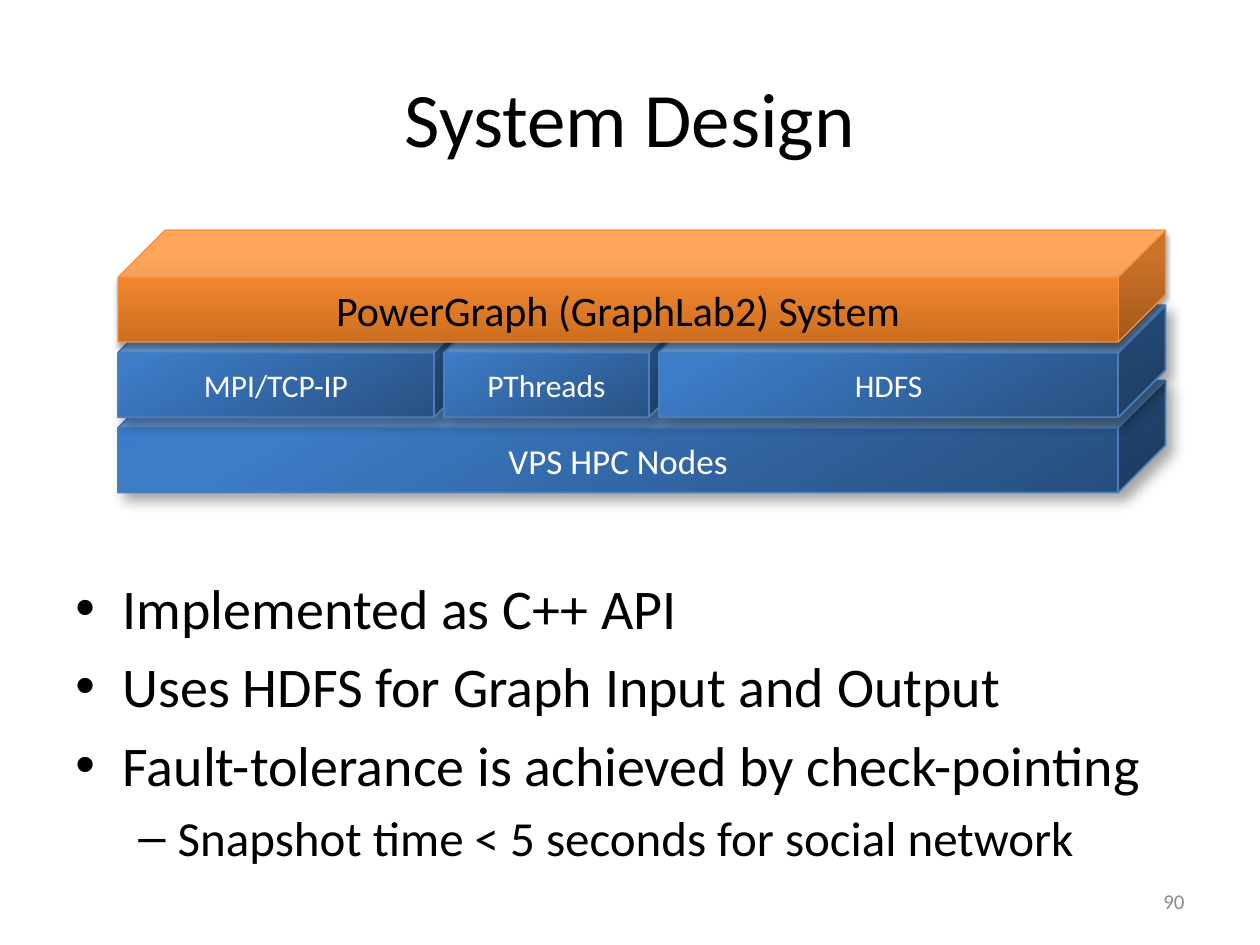
from lxml import etree
from pptx import Presentation
from pptx import util as u
from pptx.dml.color import RGBColor
from pptx.enum import shapes, text
from pptx.oxml.ns import qn

# Content
TITLE = "System Design"
PAGE = "90"
# Layers from bottom to top: style, type size, blocks as (label, front width)
LAYERS = [
    ("blue", 20, [("VPS HPC Nodes", 571.5)]),
    ("blue", 18, [("MPI/TCP-IP", 180.5), ("PThreads", 117), ("HDFS", 262.5)]),
    ("orange", 24, [("PowerGraph (GraphLab2) System", 571.5)]),
]
BULLETS = [
    (0, "Implemented as C++ API"),
    (0, "Uses HDFS for Graph Input and Output"),
    (0, "Fault-tolerance is achieved by check-pointing"),
    (1, "Snapshot time < 5 seconds for social network"),
]

THEME = {
    "font": "Calibri",
    "ink": "000000",
    "muted": "8C8C8C",
    "title": 44,
    "page": 12,
    # Per level: size, bullet, left margin, hanging indent
    "levels": [(32, "•", 27, 27), (28, "–", 58.5, 22.5)],
    # Shadow: blur, distance, angle
    "blue": {"stops": [(0, "254C7A"), (80, "3D7CC7"), (100, "3A7CCB")], "angle": 120,
             "line": "4B7EBC", "width": 1, "text": "FFFFFF", "shadow": (7, 5, 50)},
    "orange": {"stops": [(0, "CC6E20"), (80, "FF9034"), (100, "FF9136")], "angle": 90,
               "line": "F69240", "width": 0.75, "text": "000000", "shadow": (3.1, 1.8, 90)},
}
LEFT, BOTTOM_TOP, PITCH, HEIGHT, DEPTH, GAP = 67.5, 217.5, 43, 64, 27, 5.75


def add_run(p, words, size, color):
    r = p.add_run()
    r.text = words
    r.font.name, r.font.size = THEME["font"], u.Pt(size)
    r.font.color.rgb = RGBColor.from_string(color)


def add_text_box(s, box, anchor):
    tf = s.shapes.add_textbox(*map(u.Pt, box)).text_frame
    tf.word_wrap, tf.vertical_anchor = True, anchor
    return tf


def add_color(parent, color, alpha=None):
    el = etree.SubElement(parent, qn("a:srgbClr"), val=color)
    if alpha is not None:
        etree.SubElement(el, qn("a:alpha"), val=str(alpha * 1000))


def add_block(s, box, label, size, style):
    sp = s.shapes.add_shape(shapes.MSO_SHAPE.CUBE, *map(u.Pt, box))
    sp.adjustments[0] = DEPTH / HEIGHT
    sp.line.color.rgb = RGBColor.from_string(style["line"])
    sp.line.width = u.Pt(style["width"])

    # Three-stop gradient
    sp.fill.gradient()
    sp.fill.gradient_angle = style["angle"]
    stops = sp.element.spPr.find(qn("a:gradFill")).find(qn("a:gsLst"))
    for stop in list(stops):
        stops.remove(stop)
    for pos, color in style["stops"]:
        add_color(etree.SubElement(stops, qn("a:gs"), pos=str(pos * 1000)), color)

    # Soft shadow
    sp.shadow.inherit = False
    blur, dist, angle = style["shadow"]
    shadow = etree.SubElement(
        sp.element.spPr.find(qn("a:effectLst")), qn("a:outerShdw"),
        blurRad=str(u.Pt(blur)), dist=str(u.Pt(dist)), dir=str(angle * 60000), rotWithShape="0")
    add_color(shadow, "000000", 35)

    tf = sp.text_frame
    tf.word_wrap, tf.vertical_anchor = True, text.MSO_ANCHOR.MIDDLE
    p = tf.paragraphs[0]
    p.alignment = text.PP_ALIGN.CENTER
    add_run(p, label, size, style["text"])


def main():
    prs = Presentation()
    prs.slide_width, prs.slide_height = u.Pt(720), u.Pt(540)
    s = prs.slides.add_slide(prs.slide_layouts[6])

    # Title and page number
    for box, words, size, color, align in [
        ((36, 21.6, 648, 90), TITLE, THEME["title"], THEME["ink"], text.PP_ALIGN.CENTER),
        ((516, 500.5, 168, 28.75), PAGE, THEME["page"], THEME["muted"], text.PP_ALIGN.RIGHT),
    ]:
        p = add_text_box(s, box, text.MSO_ANCHOR.MIDDLE).paragraphs[0]
        p.alignment = align
        add_run(p, words, size, color)

    # Bullets
    tf = add_text_box(s, (36, 324, 648, 180), text.MSO_ANCHOR.TOP)
    for i, (level, words) in enumerate(BULLETS):
        size, mark, margin, hang = THEME["levels"][level]
        p = tf.add_paragraph() if i else tf.paragraphs[0]
        p.level = level
        p.space_before = u.Pt(0.2 * size if i else 0)
        pPr = p._p.get_or_add_pPr()
        pPr.set("marL", str(u.Pt(margin)))
        pPr.set("indent", str(-u.Pt(hang)))
        etree.SubElement(pPr, qn("a:buFont"), typeface="Arial")
        etree.SubElement(pPr, qn("a:buChar"), char=mark)
        add_run(p, words, size, THEME["ink"])

    # System stack, bottom layer first
    for row, (style, size, blocks) in enumerate(LAYERS):
        x = LEFT
        for label, front in blocks:
            box = (x, BOTTOM_TOP - row * PITCH, front + DEPTH, HEIGHT)
            add_block(s, box, label, size, THEME[style])
            x += front + GAP

    prs.save("out.pptx")


if __name__ == "__main__":
    main()
